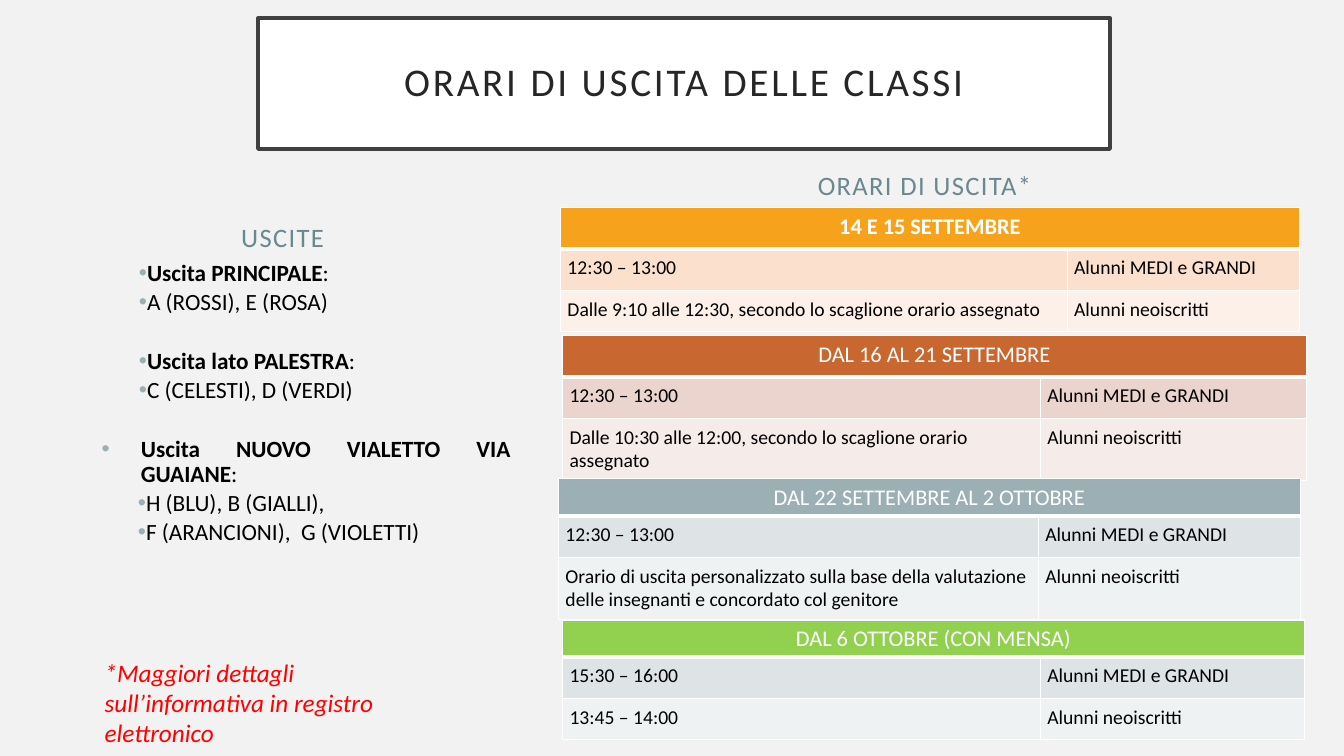
from lxml import etree
from pptx import Presentation
from pptx import util as u
from pptx.dml.color import RGBColor
from pptx.enum import shapes, text
from pptx.oxml.ns import qn

CENTER, JUSTIFY, LEFT = text.PP_ALIGN.CENTER, text.PP_ALIGN.JUSTIFY, text.PP_ALIGN.LEFT
TOP, MIDDLE, BOTTOM = text.MSO_ANCHOR.TOP, text.MSO_ANCHOR.MIDDLE, text.MSO_ANCHOR.BOTTOM


def color(value):
    return RGBColor.from_string(value)


def assign(target, values):
    for name, value in values.items():
        setattr(target, name, value)


class Sheet:
    font = "Calibri"
    bullet_color = "9BAFB5"

    def __init__(self, deck, background):
        self.width, self.height = deck.slide_width, deck.slide_height
        self.page = deck.slides.add_slide(deck.slide_layouts[6])
        self.page.background.fill.solid()
        self.page.background.fill.fore_color.rgb = color(background)

    def across(self, share):
        return round(self.width * share / 100)

    def down(self, share):
        return round(self.height * share / 100)

    def area(self, left, top, width, height):
        return self.across(left), self.down(top), self.across(width), self.down(height)

    def add_span(self, para, words, ink, size, spacing=0, bold=False, italic=False):
        span = para.add_run()
        span.text = words
        assign(span.font, {"name": self.font, "size": u.Pt(size), "bold": bold, "italic": italic})
        span.font.color.rgb = color(ink)
        if spacing:
            span.font._element.set("spc", str(spacing * 100))

    def label(self, area, words, align=LEFT, anchor=TOP, **style):
        box = self.page.shapes.add_textbox(*self.area(*area))
        assign(box.text_frame, {"word_wrap": True, "vertical_anchor": anchor})
        para = box.text_frame.paragraphs[0]
        para.alignment = align
        self.add_span(para, words, **style)

    def banner(self, area, words, fill, line, **style):
        box = self.page.shapes.add_shape(shapes.MSO_SHAPE.RECTANGLE, *self.area(*area))
        box.shadow.inherit = False
        box.fill.solid()
        box.fill.fore_color.rgb = color(fill)
        box.line.color.rgb = color(line)
        box.line.width = u.Pt(2.5)
        assign(box.text_frame, {"word_wrap": True, "vertical_anchor": MIDDLE})
        para = box.text_frame.paragraphs[0]
        assign(para, {"alignment": CENTER, "line_spacing": 0.9})
        self.add_span(para, words, **style)

    def bullets(self, area, items, **style):
        box = self.page.shapes.add_textbox(*self.area(*area))
        frame = box.text_frame
        frame.word_wrap = True
        for number, (strong, plain, margin, indent, before) in enumerate(items):
            para = frame.add_paragraph() if number else frame.paragraphs[0]
            assign(para, {"alignment": JUSTIFY, "line_spacing": 0.9, "space_before": u.Pt(before)})
            layout = para._p.get_or_add_pPr()
            layout.set("marL", str(u.Inches(margin)))
            layout.set("indent", str(u.Inches(indent)))
            tint = etree.SubElement(layout, qn("a:buClr"))
            etree.SubElement(tint, qn("a:srgbClr"), val=self.bullet_color)
            etree.SubElement(layout, qn("a:buFont"), typeface="Arial")
            etree.SubElement(layout, qn("a:buChar"), char="•")
            for words, bold in ((strong, True), (plain, False)):
                if words:
                    self.add_span(para, words, bold=bold, **style)

    def cell(self, cell, words, fill, header, bold):
        cell.fill.solid()
        cell.fill.fore_color.rgb = color(fill)
        if not header:
            sides = ("left", "top", "right", "bottom")
            assign(cell, {f"margin_{side}": u.Inches(0.07) for side in sides})
        para = cell.text_frame.paragraphs[0]
        para.alignment = CENTER if header else LEFT
        if words:
            ink, size = ("FFFFFF", 16) if header else ("000000", 14)
            self.add_span(para, words, ink, size, bold=bold)
        for place, side in enumerate("LRTB"):
            points = 3 if header and side == "B" else 1
            edge = etree.Element(qn(f"a:ln{side}"), w=str(u.Pt(points)))
            paint = etree.SubElement(edge, qn("a:solidFill"))
            etree.SubElement(paint, qn("a:srgbClr"), val="FFFFFF")
            cell._tc.get_or_add_tcPr().insert(place, edge)

    def timetable(self, left, top, columns, rows, fills, heading, times, bold=False):
        area = self.area(left, top, sum(columns), sum(rows))
        table = self.page.shapes.add_table(len(rows), len(columns), *area).table
        table.horz_banding = False
        for column, share in zip(table.columns, columns):
            column.width = self.across(share)
        for row, share in zip(table.rows, rows):
            row.height = self.down(share)
        content = [(heading, "")] + list(zip(times, ("Alunni MEDI e GRANDI", "Alunni neoiscritti")))
        for number, (row, fill) in enumerate(zip(content, fills)):
            for place, words in enumerate(row):
                header = number == 0
                self.cell(table.cell(number, place), words, fill, header, bold and header)
        table.cell(0, 0).merge(table.cell(0, 1))


def main():
    deck = Presentation()
    deck.slide_width, deck.slide_height = u.Inches(13.33), u.Inches(7.5)
    sheet = Sheet(deck, "F2F2F2")

    sheet.banner((19.2, 2.4, 63.4, 17.33), "ORARI DI USCITA DELLE CLASSI",
                 "FFFFFF", "404040", ink="262626", size=28, spacing=2)
    for area, words in (((3.53, 23.87, 35, 10.27), "USCITE"),
                        ((41.5, 20.27, 54.6, 6.93), "ORARI DI USCITA*")):
        sheet.label(area, words, CENTER, BOTTOM, ink="6B8891", size=19, spacing=1)

    near, hanging, far = (0.25, 0.31), (0.58, -0.39), (0.58, -0.03)
    tight, gap = 3, 24
    sheet.bullets((5.4, 33.87, 33.3, 49.07), [
        ("Uscita PRINCIPALE", ":", *near, tight),
        ("", "A (ROSSI), E (ROSA)", *near, tight),
        ("Uscita lato PALESTRA", ":", *near, gap),
        ("", "C (CELESTI), D (VERDI)", *near, tight),
        ("Uscita NUOVO VIALETTO VIA GUAIANE", ":", *hanging, gap),
        ("", "H (BLU), B (GIALLI),", *far, tight),
        ("", "F (ARANCIONI),  G (VIOLETTI)", *far, tight),
    ], ink="000000", size=16.6)

    short, normal, tall = 4.93, 5.47, 8.2
    noon = "12:30 – 13:00"
    sheet.timetable(41.7, 27.47, (37.7, 17.3), (normal, normal, normal),
                    ("F6A21D", "FBE0CD", "FDF0E8"), "14 E 15 SETTEMBRE",
                    (noon, "Dalle 9:10 alle 12:30, secondo lo scaglione orario assegnato"), bold=True)
    sheet.timetable(41.85, 44.4, (35.55, 19.8), (normal, normal, tall),
                    ("C96731", "EBD3CE", "F5EBE8"), "DAL 16 AL 21 SETTEMBRE",
                    (noon, "Dalle 10:30 alle 12:00, secondo lo scaglione orario assegnato"))
    sheet.timetable(41.55, 63.33, (35.7, 19.5), (short, normal, tall),
                    ("9BAFB5", "DEE3E5", "EFF2F3"), "DAL 22 SETTEMBRE AL 2 OTTOBRE",
                    (noon, "Orario di uscita personalizzato sulla base della valutazione "
                           "delle insegnanti e concordato col genitore"))
    sheet.timetable(41.85, 82, (35.55, 19.65), (short, normal, normal),
                    ("92D050", "DEE3E5", "EFF2F3"), "DAL 6 OTTOBRE (CON MENSA)",
                    ("15:30 – 16:00", "13:45 – 14:00"))

    sheet.label((7.05, 86.27, 27.1, 9.47),
                "*Maggiori dettagli sull’informativa in registro elettronico",
                ink="FF0000", size=18, italic=True)
    deck.save("out.pptx")


if __name__ == "__main__":
    main()
